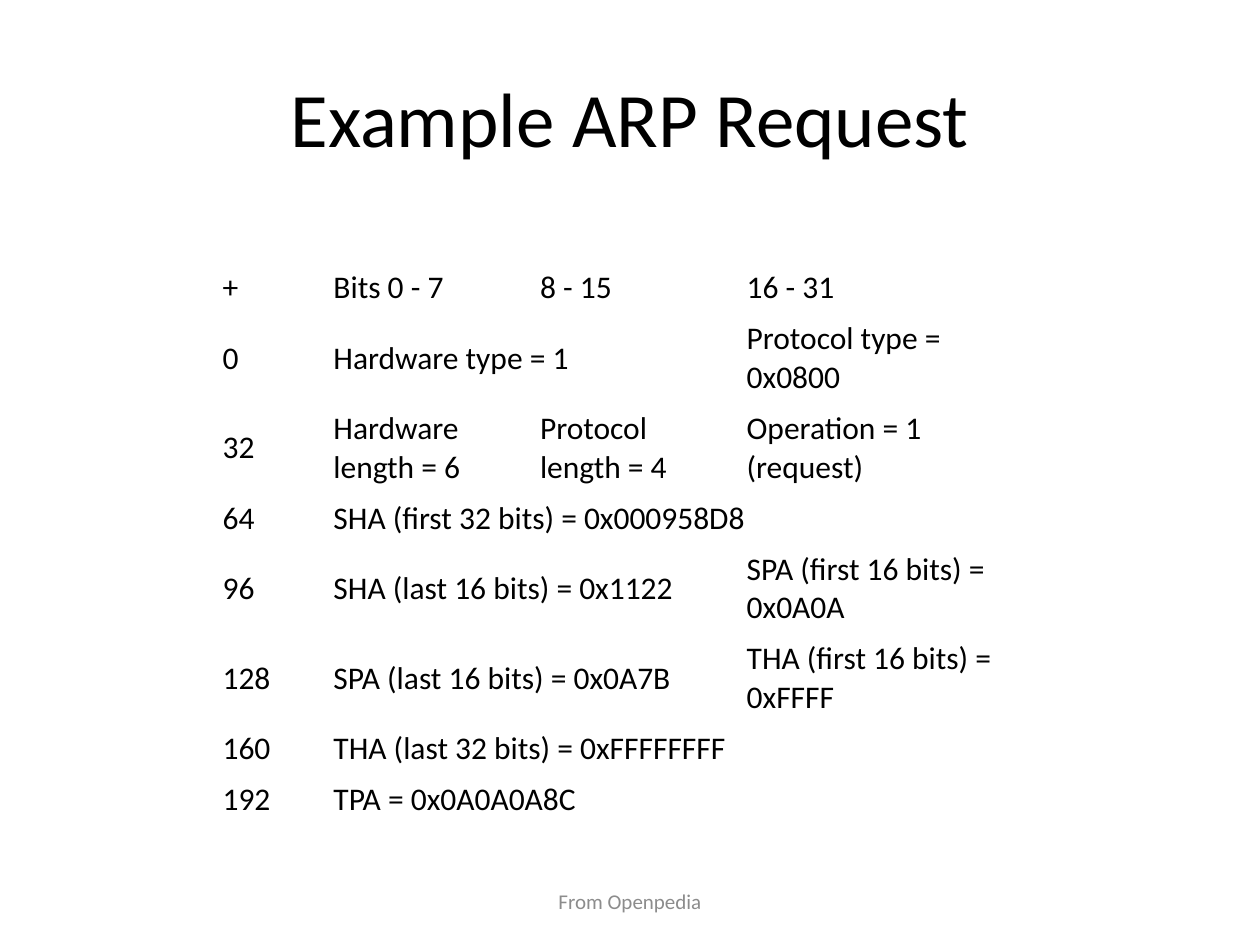
"""Build the slide showing the fields of an example ARP request."""
from pptx import Presentation
from pptx.dml.color import RGBColor
from pptx.enum.text import MSO_ANCHOR as Anchor, PP_ALIGN as Align
from pptx.util import Pt

BLACK = RGBColor(0, 0, 0)
GREY = RGBColor(0x8C, 0x8C, 0x8C)
FONT = "Calibri"
COLUMN_WIDTHS = [63.36, 118.08, 118.08, 180]
ONE_LINE, TWO_LINES = 29.2, 51.2

FIELDS = [
    (ONE_LINE, [("+", 1), ("Bits 0 - 7", 1), ("8 - 15", 1), ("16 - 31", 1)]),
    (TWO_LINES, [("0", 1), ("Hardware type = 1", 2), ("Protocol type = 0x0800", 1)]),
    (TWO_LINES, [("32", 1), ("Hardware length = 6", 1), ("Protocol length = 4", 1),
                 ("Operation = 1 (request)", 1)]),
    (ONE_LINE, [("64", 1), ("SHA (first 32 bits) = 0x000958D8", 3)]),
    (TWO_LINES, [("96", 1), ("SHA (last 16 bits) = 0x1122", 2),
                 ("SPA (first 16 bits) = 0x0A0A", 1)]),
    (TWO_LINES, [("128", 1), ("SPA (last 16 bits) = 0x0A7B", 2),
                 ("THA (first 16 bits) = 0xFFFF", 1)]),
    (ONE_LINE, [("160", 1), ("THA (last 32 bits) = 0xFFFFFFFF", 3)]),
    (ONE_LINE, [("192", 1), ("TPA = 0x0A0A0A8C", 3)]),
]


def write(frame, text, size, color, align):
    frame.text = text
    frame.word_wrap = True
    paragraph = frame.paragraphs[0]
    paragraph.alignment = align
    font = paragraph.runs[0].font
    font.name, font.size, font.color.rgb = FONT, Pt(size), color


prs = Presentation()
prs.slide_width, prs.slide_height = Pt(720), Pt(540)
slide = prs.slides.add_slide(prs.slide_layouts[5])

title = slide.shapes.title
title.left, title.top, title.width, title.height = Pt(36), Pt(21.6), Pt(648), Pt(90)
write(title.text_frame, "Example ARP Request", 44, BLACK, Align.CENTER)
title.text_frame.vertical_anchor = Anchor.MIDDLE

packet = slide.shapes.add_table(
    len(FIELDS), len(COLUMN_WIDTHS), Pt(120), Pt(150),
    Pt(sum(COLUMN_WIDTHS)), Pt(sum(height for height, _ in FIELDS))).table
packet.first_row = packet.horz_banding = False
for column, width in zip(packet.columns, COLUMN_WIDTHS):
    column.width = Pt(width)

for row, (height, fields) in enumerate(FIELDS):
    packet.rows[row].height = Pt(height)
    start = 0
    for text, span in fields:
        cell = packet.cell(row, start)
        if span > 1:
            cell.merge(packet.cell(row, start + span - 1))
        write(cell.text_frame, text, 18, BLACK, Align.LEFT)
        cell.vertical_anchor = Anchor.MIDDLE
        start += span
    for cell in packet.rows[row].cells:
        cell.fill.background()

credit = slide.shapes.add_textbox(Pt(246), Pt(500.5), Pt(228), Pt(28.8))
write(credit.text_frame, "From Openpedia", 12, GREY, Align.CENTER)
credit.text_frame.vertical_anchor = Anchor.MIDDLE

prs.save("out.pptx")
